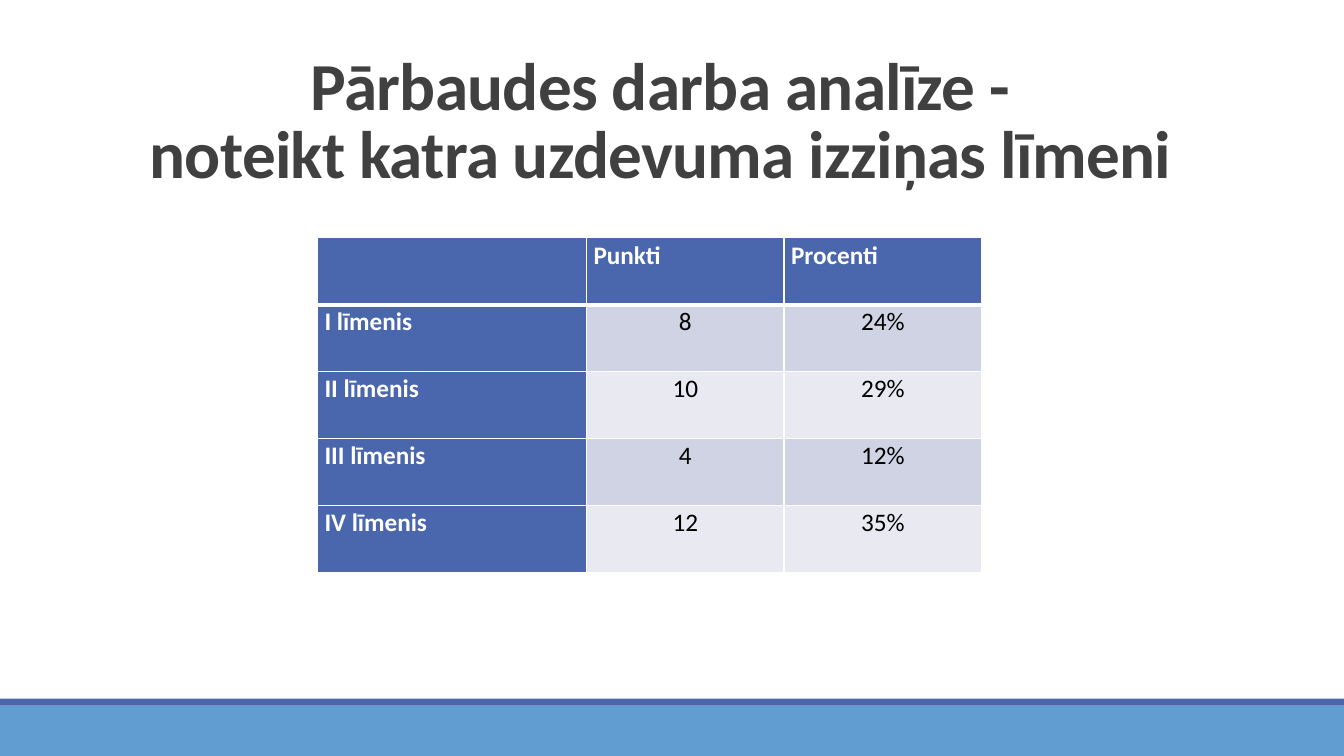
from lxml.etree import SubElement
from pptx import Presentation
from pptx.dml.color import RGBColor
from pptx.enum.shapes import MSO_SHAPE as Shape
from pptx.enum.text import MSO_ANCHOR as Anchor, PP_ALIGN as Align
from pptx.oxml.ns import qn
from pptx.util import Pt

TITLE = ["Pārbaudes darba analīze -", "noteikt katra uzdevuma izziņas līmeni"]
ROWS = [
    ("", "Punkti", "Procenti"),
    ("I līmenis", "8", "24%"),
    ("II līmenis", "10", "29%"),
    ("III līmenis", "4", "12%"),
    ("IV līmenis", "12", "35%"),
]
COLUMN_WIDTHS = [192.2, 141.1, 141.1]
ROW_HEIGHT = 47.8
TABLE_LEFT, TABLE_TOP = 226.8, 169.9

FONT = "Calibri"
NAVY = RGBColor(0x4A, 0x66, 0xAC)
SKY = RGBColor(0x62, 0x9D, 0xD1)
GREY = RGBColor(0x40, 0x40, 0x40)
WHITE = RGBColor(0xFF, 0xFF, 0xFF)
BLACK = RGBColor(0, 0, 0)
BANDS = [RGBColor(0xE9, 0xEA, 0xF1), RGBColor(0xD0, 0xD3, 0xE3)]
FOOTER_BARS = [(504, 36, SKY), (499, 5, NAVY)]


def add_span(para, text, size, color, bold):
    span = para.add_run()
    span.text = text
    span.font.name = FONT
    span.font.size = Pt(size)
    span.font.bold = bold
    span.font.color.rgb = color
    return span


def add_footer(page, width):
    for top, height, color in FOOTER_BARS:
        bar = page.shapes.add_shape(Shape.RECTANGLE, 0, Pt(top), width, Pt(height))
        bar.shadow.inherit = False
        bar.fill.solid()
        bar.fill.fore_color.rgb = color
        bar.line.fill.background()


def add_title(page):
    box = page.shapes.add_textbox(0, Pt(26.6), Pt(943.2), Pt(114.5))
    frame = box.text_frame
    frame.word_wrap = True
    frame.vertical_anchor = Anchor.BOTTOM
    para = frame.paragraphs[0]
    para.alignment = Align.CENTER
    para.line_spacing = 0.85
    for index, line in enumerate(TITLE):
        if index:
            para.add_line_break()
        span = add_span(para, line, 48, GREY, True)
        span.font._element.set("spc", "-50")


def add_border(cell, side, width):
    line = SubElement(cell._tc.get_or_add_tcPr(), qn("a:" + side), w=str(Pt(width)))
    fill = SubElement(line, qn("a:solidFill"))
    SubElement(fill, qn("a:srgbClr"), val=str(WHITE))


def fill_cell(cell, text, row, column):
    heading = row == 0 or column == 0
    cell.margin_left = cell.margin_right = Pt(5)
    cell.margin_top = cell.margin_bottom = 0
    add_border(cell, "lnL", 1)
    add_border(cell, "lnR", 1)
    add_border(cell, "lnT", 3 if row == 1 else 1)
    add_border(cell, "lnB", 3 if row == 0 else 1)
    cell.fill.solid()
    cell.fill.fore_color.rgb = NAVY if heading else BANDS[row % 2]
    if text:
        para = cell.text_frame.paragraphs[0]
        para.alignment = Align.LEFT if heading else Align.CENTER
        para.line_spacing = 1.07
        para.space_after = Pt(8)
        add_span(para, text, 18, WHITE if heading else BLACK, heading)


def add_levels_table(page):
    frame = page.shapes.add_table(
        len(ROWS), len(COLUMN_WIDTHS), Pt(TABLE_LEFT), Pt(TABLE_TOP),
        Pt(sum(COLUMN_WIDTHS)), Pt(ROW_HEIGHT * len(ROWS)))
    table = frame.table
    for column, width in zip(table.columns, COLUMN_WIDTHS):
        column.width = Pt(width)
    for row, texts in enumerate(ROWS):
        table.rows[row].height = Pt(ROW_HEIGHT)
        for column, text in enumerate(texts):
            fill_cell(table.cell(row, column), text, row, column)


def main():
    deck = Presentation()
    deck.slide_width, deck.slide_height = Pt(960), Pt(540)
    page = deck.slides.add_slide(deck.slide_layouts[6])
    add_footer(page, deck.slide_width)
    add_title(page)
    add_levels_table(page)
    deck.save("out.pptx")


if __name__ == "__main__":
    main()
